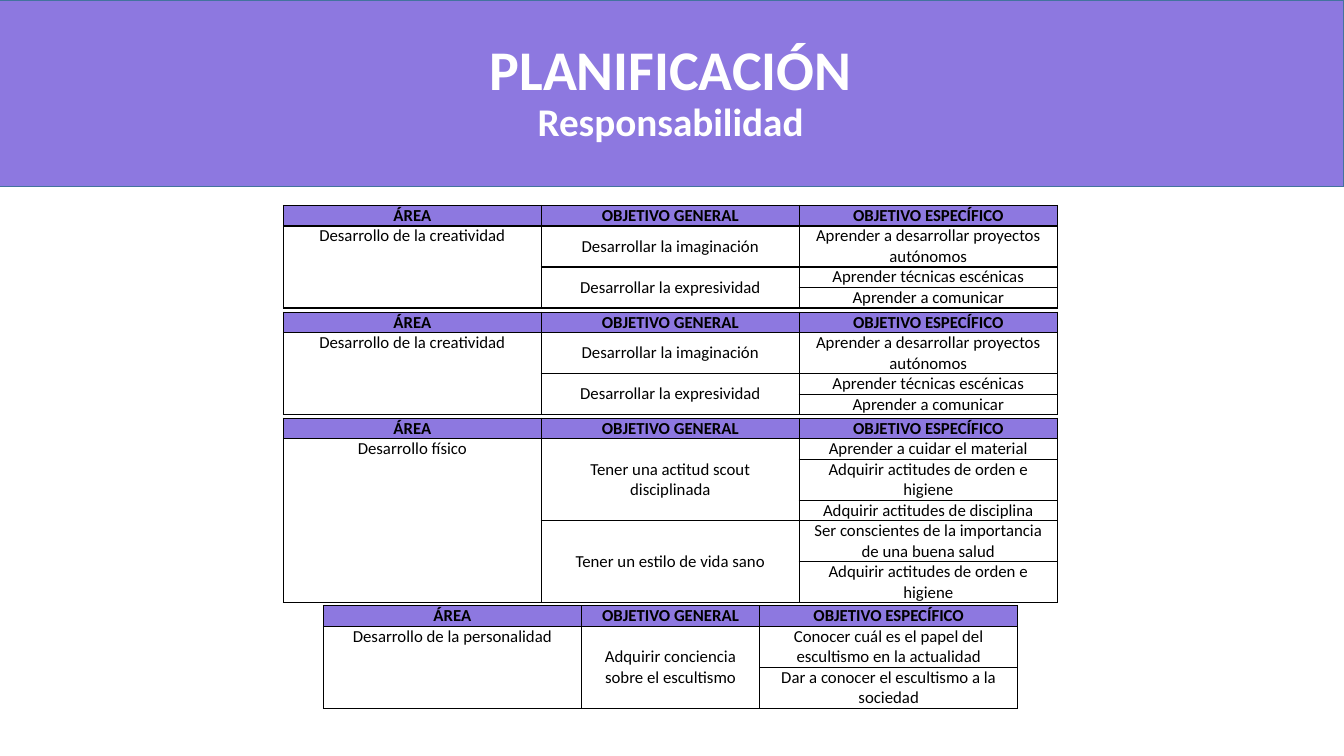
from lxml import etree
from pptx import Presentation
from pptx.dml.color import RGBColor
from pptx.enum import shapes, text
from pptx.oxml import ns
from pptx.util import Pt

LILAC = RGBColor(0x8D, 0x78, 0xE0)
BLUE = RGBColor(0x43, 0x73, 0x9E)
WHITE = RGBColor(0xFF, 0xFF, 0xFF)
BLACK = RGBColor(0, 0, 0)
FONT = "Calibri"
LINE = 14.65  # height of one line of table text
WIDE, SLIM = 184.3, 127.4

HEADS = ("ÁREA", "OBJETIVO GENERAL", "OBJETIVO ESPECÍFICO")
CREATE = ("Desarrollo de la creatividad", [
    ("Desarrollar la imaginación",
     ["Aprender a desarrollar proyectos autónomos"]),
    ("Desarrollar la expresividad",
     ["Aprender técnicas escénicas", "Aprender a comunicar"]),
])
BODY = ("Desarrollo físico", [
    ("Tener una actitud scout disciplinada",
     ["Aprender a cuidar el material",
      "Adquirir actitudes de orden e higiene",
      "Adquirir actitudes de disciplina"]),
    ("Tener un estilo de vida sano",
     ["Ser conscientes de la importancia de una buena salud",
      "Adquirir actitudes de orden e higiene"]),
])
SELF = ("Desarrollo de la personalidad", [
    ("Adquirir conciencia sobre el escultismo",
     ["Conocer cuál es el papel del escultismo en la actualidad",
      "Dar a conocer el escultismo a la sociedad"]),
])


def banner(slide, left, top, width, height):
    bar = slide.shapes.add_shape(shapes.MSO_SHAPE.RECTANGLE, Pt(left), Pt(top),
                                 Pt(width), Pt(height))
    bar.shadow.inherit = False
    bar.fill.solid()
    bar.fill.fore_color.rgb = LILAC
    bar.line.color.rgb = BLUE
    bar.line.width = Pt(1)

    box = slide.shapes.add_textbox(Pt(left + 67), Pt(top + 14.4),
                                   Pt(828), Pt(height - 28.8))
    frame = box.text_frame
    frame.word_wrap = True
    frame.vertical_anchor = text.MSO_ANCHOR.MIDDLE
    para = frame.paragraphs[0]
    para.alignment = text.PP_ALIGN.CENTER
    para.line_spacing = 0.9
    para.font.name = FONT
    para.font.bold = True
    para.font.color.rgb = WHITE
    title = para.add_run()
    title.text = "PLANIFICACIÓN"
    title.font.size = Pt(40)
    para.add_line_break()
    theme = para.add_run()
    theme.text = "Responsabilidad"
    theme.font.size = Pt(28)


def border(cell):
    props = cell._tc.get_or_add_tcPr()
    for side in ("a:lnL", "a:lnR", "a:lnT", "a:lnB"):
        line = etree.SubElement(props, ns.qn(side), w=str(Pt(1)))
        fill = etree.SubElement(line, ns.qn("a:solidFill"))
        etree.SubElement(fill, ns.qn("a:srgbClr"), val=str(BLACK))


def style(cell, head, mid):
    border(cell)
    if head:
        cell.fill.solid()
        cell.fill.fore_color.rgb = LILAC
    else:
        cell.fill.background()
    cell.margin_left = cell.margin_right = Pt(5)
    cell.margin_top = cell.margin_bottom = 0
    cell.vertical_anchor = (text.MSO_ANCHOR.MIDDLE if mid
                            else text.MSO_ANCHOR.TOP)
    para = cell.text_frame.paragraphs[0]
    para.alignment = text.PP_ALIGN.CENTER
    para.font.name = FONT
    para.font.size = Pt(12)
    para.font.bold = head
    para.font.color.rgb = BLACK


def plan(slide, left, top, cols, area, goals):
    """Draw one area: its goals span the rows of their specific aims."""
    aims = [aim for _, part in goals for aim in part]
    lines = [1] + [2 if len(aim) > 32 else 1 for aim in aims]
    grid = slide.shapes.add_table(len(lines), 3, Pt(left), Pt(top),
                                  Pt(sum(cols)), Pt(LINE * sum(lines))).table
    grid.first_row = grid.horz_banding = False
    for col, width in zip(grid.columns, cols):
        col.width = Pt(width)
    for row, count in zip(grid.rows, lines):
        row.height = Pt(LINE * count)

    for c, head in enumerate(HEADS):
        grid.cell(0, c).text = head
    grid.cell(1, 0).text = area
    for r, aim in enumerate(aims, 1):
        grid.cell(r, 2).text = aim
    start = 1
    for goal, part in goals:
        grid.cell(start, 1).text = goal
        end = start + len(part) - 1
        if end > start:
            grid.cell(start, 1).merge(grid.cell(end, 1))
        start = end + 1
    grid.cell(1, 0).merge(grid.cell(len(aims), 0))

    for r in range(len(lines)):
        for c in range(3):
            style(grid.cell(r, c), r == 0, r > 0 and c > 0)


def main():
    deck = Presentation()
    deck.slide_width, deck.slide_height = Pt(960), Pt(540)
    slide = deck.slides.add_slide(deck.slide_layouts[6])
    banner(slide, -2, 0, 962, 133.2)
    even = (WIDE, WIDE, WIDE)
    plan(slide, 202.4, 146.8, even, *CREATE)
    plan(slide, 202.4, 223, even, *CREATE)
    plan(slide, 202.4, 298.8, even, *BODY)
    plan(slide, 231, 432.6, (WIDE, SLIM, WIDE), *SELF)
    deck.save("out.pptx")


if __name__ == "__main__":
    main()
